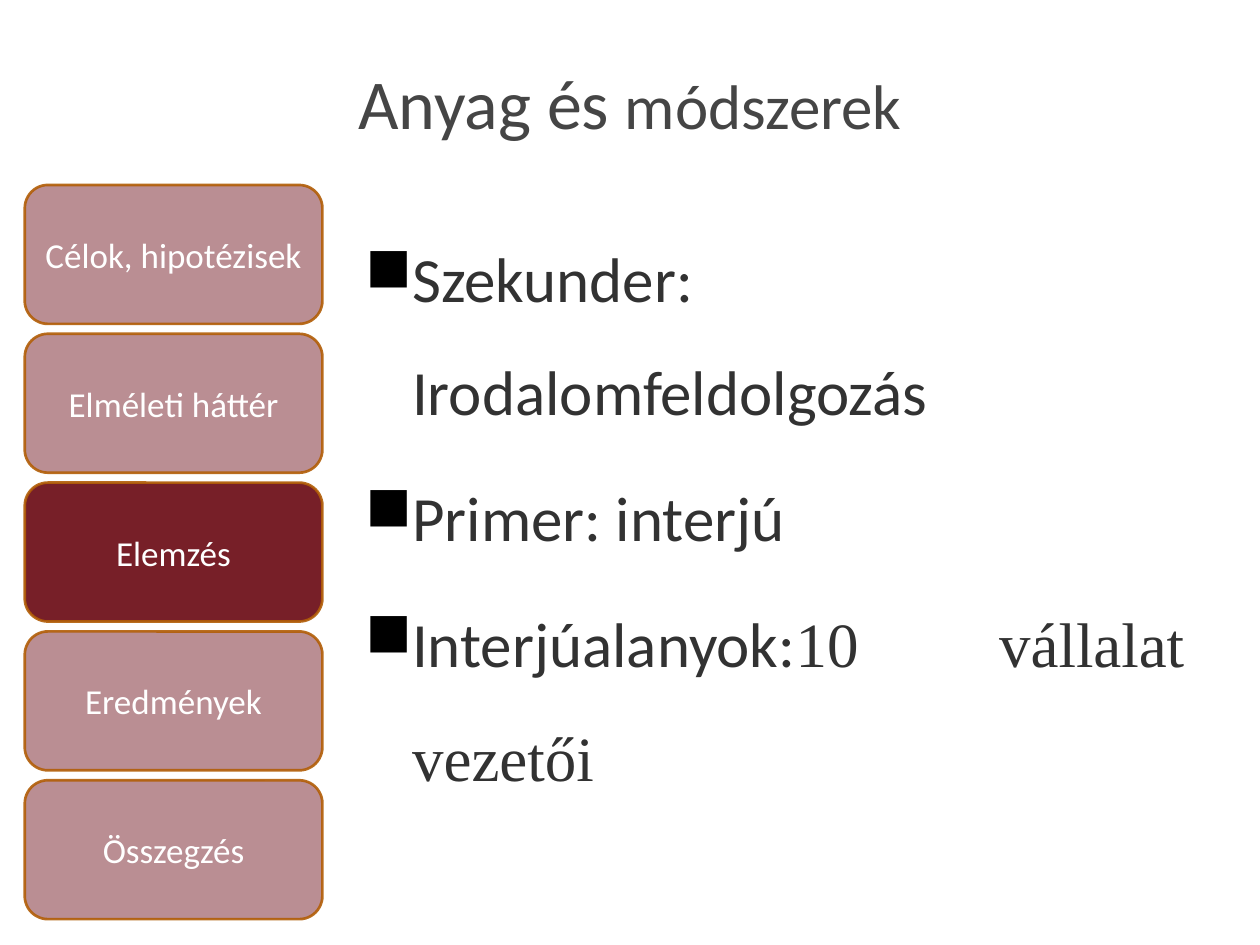
"""Build the "Anyag és módszerek" slide with its chapter navigation."""
from lxml import etree
from pptx import Presentation
from pptx import util as u
from pptx.dml.color import RGBColor
from pptx.enum import shapes, text
from pptx.oxml import ns

WINE = RGBColor(0x77, 0x1F, 0x28)
OCHRE = RGBColor(0xB2, 0x5E, 0x07)
WHITE = RGBColor(0xFF, 0xFF, 0xFF)
TITLE_GREY = RGBColor(0x45, 0x45, 0x45)
BODY_GREY = RGBColor(0x32, 0x32, 0x32)
SANS, SERIF = "Calibri", "Times New Roman"

CHAPTERS = ["Célok, hipotézisek", "Elméleti háttér", "Elemzés", "Eredmények", "Összegzés"]
CURRENT_CHAPTER = "Elemzés"
METHODS = [
    [("Szekunder: Irodalomfeldolgozás", SANS)],
    [("Primer: interjú", SANS)],
    [("Interjúalanyok:", SANS), ("10 vállalat vezetői", SERIF)],
]


class Deck:
    def __init__(self):
        self.presentation = Presentation()
        self.presentation.slide_width = u.Cm(25.4)
        self.presentation.slide_height = u.Cm(19.05)
        self.slide = self.presentation.slides.add_slide(self.presentation.slide_layouts[6])

    def add_run(self, paragraph, words, size, color, font=SANS):
        run = paragraph.add_run()
        run.text = words
        run.font.name = font
        run.font.size = u.Pt(size)
        run.font.color.rgb = color

    def add_frame(self, left, top, width, height):
        box = self.slide.shapes.add_textbox(u.Cm(left), u.Cm(top), u.Cm(width), u.Cm(height))
        box.text_frame.word_wrap = True
        return box.text_frame

    def set_opacity(self, fill, percent):
        color = fill._xPr.find(ns.qn("a:solidFill"))[0]
        etree.SubElement(color, ns.qn("a:alpha"), val=str(percent * 1000))

    def add_title(self, parts):
        frame = self.add_frame(1.27, 0.76, 22.86, 2.57)
        frame.vertical_anchor = text.MSO_ANCHOR.MIDDLE
        heading = frame.paragraphs[0]
        heading.alignment = text.PP_ALIGN.CENTER
        for words, size in parts:
            self.add_run(heading, words, size, TITLE_GREY)

    def add_bullets(self, items):
        frame = self.add_frame(7.11, 3.94, 17.02, 14.4)
        for index, parts in enumerate(items):
            item = frame.add_paragraph() if index else frame.paragraphs[0]
            item.alignment = text.PP_ALIGN.JUSTIFY
            item.line_spacing = 1.5
            item.space_before = u.Pt(7.2)
            properties = item._p.get_or_add_pPr()
            properties.set("marL", str(u.Cm(0.95)))
            properties.set("indent", str(-u.Cm(0.95)))
            bullet_color = etree.SubElement(properties, ns.qn("a:buClr"))
            etree.SubElement(bullet_color, ns.qn("a:srgbClr"), val="000000")
            etree.SubElement(properties, ns.qn("a:buChar"), char="■")
            for words, font in parts:
                self.add_run(item, words, 36, BODY_GREY, font)

    def add_chapter(self, name, top, is_current):
        button = self.slide.shapes.add_shape(
            shapes.MSO_SHAPE.ROUNDED_RECTANGLE, u.Cm(0.5), u.Cm(top), u.Cm(6), u.Cm(2.8))
        button.shadow.inherit = False
        button.fill.solid()
        button.fill.fore_color.rgb = WINE
        if not is_current:
            self.set_opacity(button.fill, 50)
        button.line.color.rgb = OCHRE
        button.line.width = u.Pt(1.54)
        self.set_opacity(button.line.fill, 90)
        frame = button.text_frame
        frame.margin_left = frame.margin_right = 0
        frame.vertical_anchor = text.MSO_ANCHOR.MIDDLE
        label = frame.paragraphs[0]
        label.alignment = text.PP_ALIGN.CENTER
        self.add_run(label, name, 20, WHITE)


def main():
    deck = Deck()
    deck.add_title([("Anyag és ", 40), ("módszerek", 36)])
    deck.add_bullets(METHODS)
    for row, name in enumerate(CHAPTERS):
        deck.add_chapter(name, 3.73 + 3 * row, name == CURRENT_CHAPTER)
    deck.presentation.save("out.pptx")


if __name__ == "__main__":
    main()
